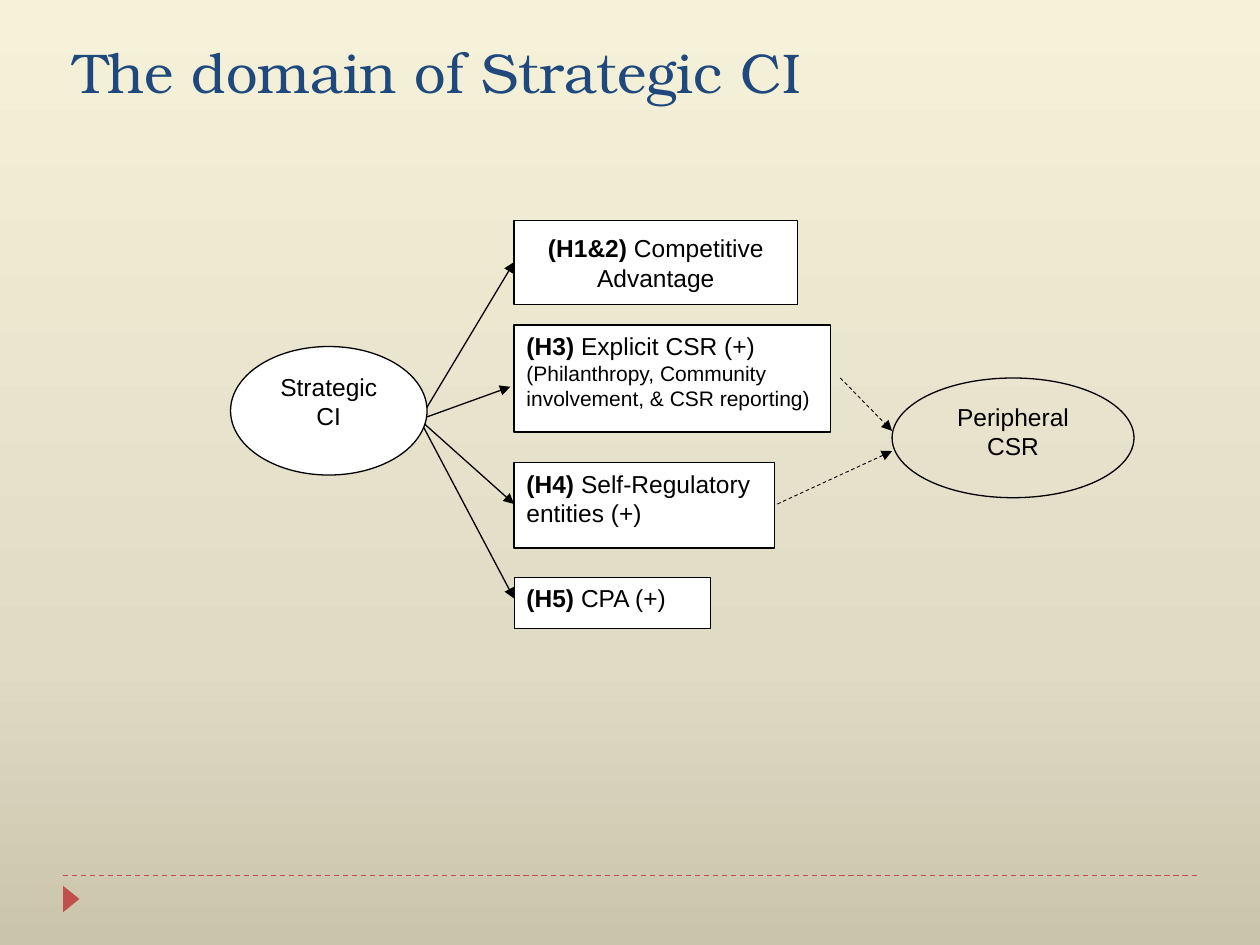
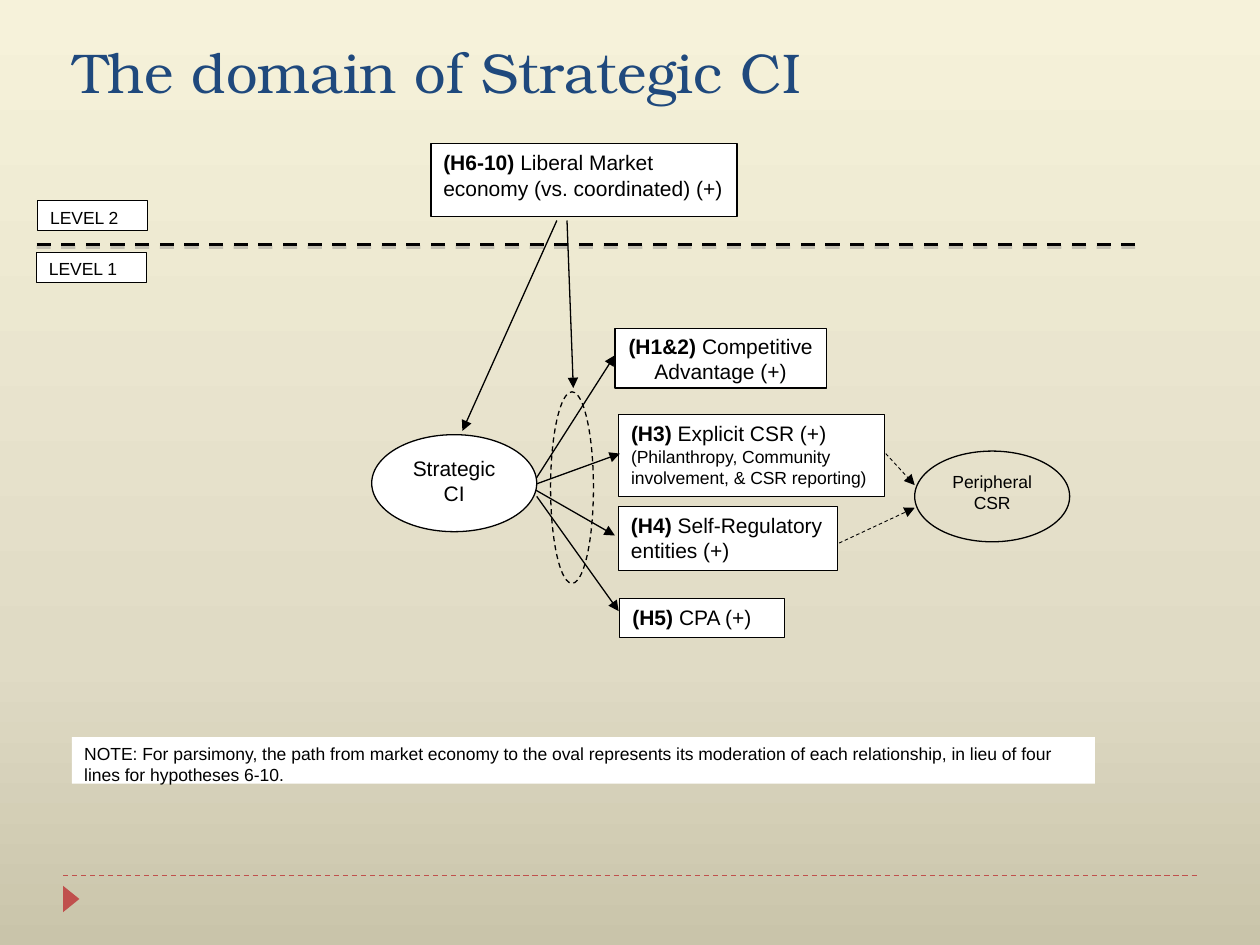
from dataclasses import dataclass

from lxml import etree
from pptx import Presentation
from pptx.dml.color import RGBColor
from pptx.enum.dml import MSO_LINE
from pptx.enum.shapes import MSO_CONNECTOR, MSO_SHAPE
from pptx.enum.text import MSO_ANCHOR, PP_ALIGN
from pptx.oxml.ns import qn
from pptx.util import Inches, Pt

RECT, OVAL, TRIANGLE = MSO_SHAPE.RECTANGLE, MSO_SHAPE.OVAL, MSO_SHAPE.ISOSCELES_TRIANGLE
STRAIGHT = MSO_CONNECTOR.STRAIGHT
DASH = MSO_LINE.DASH
LEFT, CENTER = PP_ALIGN.LEFT, PP_ALIGN.CENTER
TOP, MIDDLE = MSO_ANCHOR.TOP, MSO_ANCHOR.MIDDLE


@dataclass(frozen=True)
class Theme:
    ink: str = "000000"
    paper: str = "FFFFFF"
    accent: str = "C0504D"
    title: str = "1F497D"
    shadow: str = "808080"
    backdrop: tuple = ((0, "C9C4AA"), (30, "E0DBC5"), (100, "F6F2DA"))
    title_font: str = "TeX Gyre Bonum"
    body_font: str = "Arial"
    title_size: float = 32
    large: float = 14
    medium: float = 12
    small: float = 10
    hairline: float = 0
    thin: float = 0.5
    normal: float = 0.75
    heavy: float = 2


THEME = Theme()


@dataclass(frozen=True)
class Node:
    """A box or oval with an optional bold tag and a smaller detail line."""
    at: tuple
    text: str = ""
    size: float = THEME.large
    tag: str = ""
    detail: str = ""
    detail_size: float = THEME.medium
    kind: int = RECT
    fill: str | None = THEME.paper
    width: float | None = THEME.hairline
    dash: int | None = None
    align: int = LEFT
    anchor: int = TOP


@dataclass(frozen=True)
class Link:
    """A straight line, with an arrowhead at its end by default."""
    start: tuple
    end: tuple
    width: float = THEME.normal
    dash: int | None = None
    color: str = THEME.ink
    arrow: bool = True
    shadow: bool = False


def apply(target, values: dict) -> None:
    for name, value in values.items():
        setattr(target, name, value)


def add_span(para, text: str, size: float, bold: bool = False,
             font: str = THEME.body_font, color: str = THEME.ink) -> None:
    span = para.add_run()
    span.text = text
    apply(span.font, {"name": font, "size": Pt(size), "bold": bold})
    span.font.color.rgb = RGBColor.from_string(color)


def style_line(line, color: str, width: float, dash: int | None) -> None:
    line.color.rgb = RGBColor.from_string(color)
    apply(line, {"width": Pt(width), "dash_style": dash})


def draw_node(page, node: Node) -> None:
    box = page.shapes.add_shape(node.kind, *map(Inches, node.at))
    box.shadow.inherit = False
    if node.fill:
        box.fill.solid()
        box.fill.fore_color.rgb = RGBColor.from_string(node.fill)
    else:
        box.fill.background()
    if node.width is None:
        box.line.fill.background()
    else:
        style_line(box.line, THEME.ink, node.width, node.dash)
    if not node.text:
        return
    frame = box.text_frame
    apply(frame, {"word_wrap": True, "vertical_anchor": node.anchor})
    para = frame.paragraphs[0]
    para.alignment = node.align
    if node.tag:
        add_span(para, f"({node.tag}) ", node.size, bold=True)
    add_span(para, node.text, node.size)
    if node.detail:
        para = frame.add_paragraph()
        para.alignment = node.align
        add_span(para, node.detail, node.detail_size)


def draw_link(page, link: Link) -> None:
    ends = map(Inches, (*link.start, *link.end))
    connector = page.shapes.add_connector(STRAIGHT, *ends)
    style_line(connector.line, link.color, link.width, link.dash)
    properties = connector.element.spPr
    if link.arrow:
        etree.SubElement(properties.find(qn("a:ln")), qn("a:tailEnd"), type="triangle")
    effects = etree.SubElement(properties, qn("a:effectLst"))
    if link.shadow:
        shade = etree.SubElement(effects, qn("a:outerShdw"), blurRad="0",
                                 dist=str(Pt(1.6)), dir=str(90 * 60000), rotWithShape="0")
        color = etree.SubElement(shade, qn("a:srgbClr"), val=THEME.shadow)
        etree.SubElement(color, qn("a:alpha"), val="38000")


def paint_backdrop(deck) -> None:
    """Give the master a vertical gradient that every page inherits."""
    master = deck.slide_master
    fill = master.background.fill
    fill.gradient()
    fill.gradient_angle = 90
    stops = master.element.find(".//" + qn("a:gsLst"))
    for stop in list(stops):
        stops.remove(stop)
    for percent, color in THEME.backdrop:
        stop = etree.SubElement(stops, qn("a:gs"), pos=str(percent * 1000))
        etree.SubElement(stop, qn("a:srgbClr"), val=color)


def add_page(deck):
    """Add a blank page with the footer rule and its marker."""
    page = deck.slides.add_slide(deck.slide_layouts[6])
    draw_link(page, Link((0.5, 6.95), (9.5, 6.95), dash=DASH,
                         color=THEME.accent, arrow=False))
    marker = page.shapes.add_shape(TRIANGLE, *map(Inches, (0.46, 7.07, 0.21, 0.13)))
    marker.rotation = 90
    marker.shadow.inherit = False
    marker.fill.solid()
    marker.fill.fore_color.rgb = RGBColor.from_string(THEME.accent)
    marker.line.fill.background()
    return page


def add_title(page, text: str) -> None:
    box = page.shapes.add_textbox(*map(Inches, (0.5, 0.25, 8.92, 0.82)))
    apply(box.text_frame, {"word_wrap": True, "vertical_anchor": TOP,
                           "margin_left": Inches(0.08)})
    add_span(box.text_frame.paragraphs[0], text, THEME.title_size,
             font=THEME.title_font, color=THEME.title)


def outcome_nodes(places: dict, size: float, detail_size: float,
                  advantage: str) -> list[Node]:
    """The four hypothesis boxes, shared by both models."""
    return [
        Node(places["H3"], "Explicit CSR (+)", size, "H3",
             "(Philanthropy, Community involvement, & CSR reporting)", detail_size),
        Node(places["H5"], "CPA (+)", size, "H5", width=THEME.thin),
        Node(places["H1&2"], advantage, size, "H1&2", align=CENTER, anchor=MIDDLE),
        Node(places["H4"], "Self-Regulatory entities (+)", size, "H4"),
    ]


def oval(at: tuple, text: str, size: float, fill: str | None = None) -> Node:
    return Node(at, text, size, kind=OVAL, fill=fill, width=THEME.normal, align=CENTER)


def peripheral_link(start: tuple, end: tuple) -> Link:
    return Link(start, end, THEME.thin, DASH)


def draw_page(deck, parts: list) -> None:
    page = add_page(deck)
    for part in parts:
        if isinstance(part, Node):
            draw_node(page, part)
        else:
            draw_link(page, part)
    add_title(page, "The domain of Strategic CI")


def base_model() -> list:
    places = {"H1&2": (4.08, 1.75, 2.25, 0.67), "H3": (4.08, 2.58, 2.51, 0.85),
              "H4": (4.08, 3.67, 2.07, 0.68), "H5": (4.08, 4.58, 1.56, 0.41)}
    targets = [(4.08, 2.08), (4.08, 4.75), (4.05, 3.07), (4.08, 4)]
    return [
        *outcome_nodes(places, THEME.large, THEME.medium, "Competitive Advantage"),
        oval((7.08, 3, 1.92, 0.95), "Peripheral CSR", THEME.large),
        *(Link((3.33, 3.33), target) for target in targets),
        peripheral_link((6.17, 4), (7.08, 3.58)),
        peripheral_link((6.67, 3), (7.08, 3.42)),
        oval((1.83, 2.75, 1.56, 1.02), "Strategic CI", THEME.large, THEME.paper),
    ]


def two_level_model() -> list:
    places = {"H1&2": (4.88, 2.61, 1.68, 0.47), "H3": (4.91, 3.29, 2.11, 0.65),
              "H4": (4.91, 4.02, 1.74, 0.51), "H5": (4.92, 4.75, 1.31, 0.31)}
    note = ("NOTE: For parsimony, the path from market economy to the oval represents "
            "its moderation of each relationship, in lieu of four lines for "
            "hypotheses 6-10.")
    return [
        # Moderation oval and note
        Node((4.37, 3.11, 0.34, 1.52), kind=OVAL, fill=None,
             width=THEME.normal, dash=DASH),
        Node((0.57, 5.85, 8.12, 0.37), note, THEME.small, width=None),
        *outcome_nodes(places, THEME.medium, THEME.small, "Competitive Advantage (+)"),
        # Level divider and labels
        Link((0.29, 1.94), (9.01, 1.94), THEME.heavy, DASH, arrow=False, shadow=True),
        Node((0.29, 2, 0.87, 0.24), "LEVEL 1", THEME.small, width=THEME.thin),
        Node((0.3, 1.59, 0.87, 0.24), "LEVEL 2", THEME.small, width=THEME.thin),
        Node((3.42, 1.14, 2.43, 0.58), "Liberal Market economy (vs. coordinated) (+)",
             THEME.medium, "H6-10", width=THEME.normal),
        # Relationships
        oval((7.26, 3.58, 1.23, 0.72), "Peripheral CSR", THEME.small),
        Link((4.42, 1.75), (3.67, 3.42)),
        Link((4.26, 3.79), (4.88, 2.82)),
        Link((4.26, 3.94), (4.91, 4.85)),
        Link((4.26, 3.84), (4.92, 3.6)),
        peripheral_link((6.66, 4.31), (7.26, 4.03)),
        peripheral_link((7.03, 3.6), (7.26, 3.85)),
        Link((4.2, 3.86), (4.88, 4.25)),
        oval((2.95, 3.45, 1.31, 0.77), "Strategic CI", THEME.medium, THEME.paper),
        Link((4.5, 1.75), (4.55, 3.08)),
    ]


def main() -> None:
    deck = Presentation()
    apply(deck, {"slide_width": Inches(10), "slide_height": Inches(7.5)})
    paint_backdrop(deck)
    for parts in (base_model(), two_level_model()):
        draw_page(deck, parts)
    deck.save("out.pptx")


if __name__ == "__main__":
    main()
